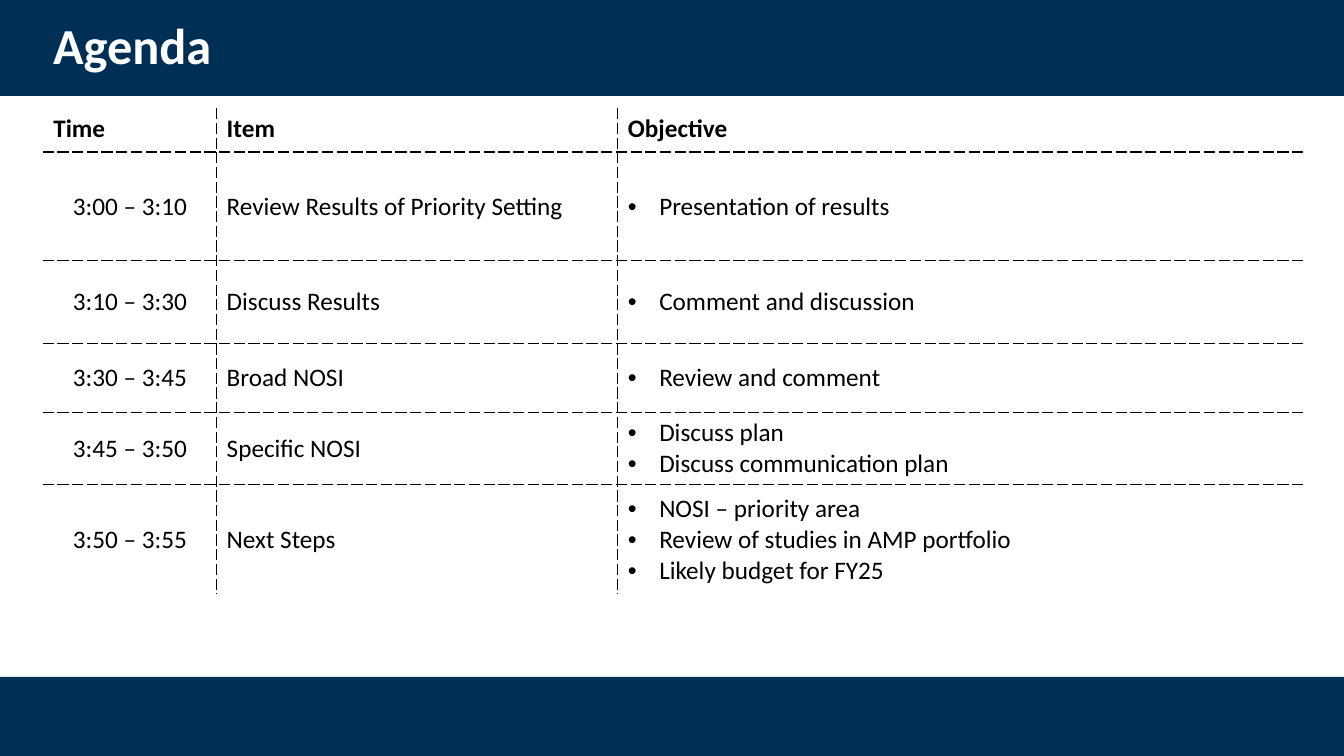
import pptx
import pptx.util
import pptx.dml.color
import pptx.enum.shapes
import pptx.enum.text
from lxml import etree

Cm, Pt = pptx.util.Cm, pptx.util.Pt
RGB = pptx.dml.color.RGBColor.from_string
MIDDLE = pptx.enum.text.MSO_ANCHOR.MIDDLE
NS = "http://schemas.openxmlformats.org/drawingml/2006/main"
COLORS = {"navy": "002F56", "white": "FFFFFF", "black": "000000"}
ROWS = [
    ("Time", "Item", ["Objective"]),
    ("3:00 – 3:10", "Review Results of Priority Setting", ["Presentation of results"]),
    ("3:10 – 3:30", "Discuss Results", ["Comment and discussion"]),
    ("3:30 – 3:45", "Broad NOSI", ["Review and comment"]),
    ("3:45 – 3:50", "Specific NOSI", ["Discuss plan", "Discuss communication plan"]),
    ("3:50 – 3:55", "Next Steps", [
        "NOSI – priority area",
        "Review of studies in AMP portfolio",
        "Likely budget for FY25",
    ]),
]
WIDTHS = [4.37, 10.11, 17.3]
HEIGHTS = [1.09, 2.74, 2.08, 1.75, 1.75, 2.79]


def style(para, size, color, bold):
    para.font.name = "Calibri"
    para.font.size = Pt(size)
    para.font.bold = bold
    para.font.color.rgb = RGB(COLORS[color])


def rule(cell, sides):
    """Draw dashed borders on the given sides, in the order L, R, T, B."""
    props = cell._tc.get_or_add_tcPr()
    for i, side in enumerate(sides):
        line = etree.fromstring(
            f'<a:ln{side} xmlns:a="{NS}" w="12700"><a:solidFill>'
            f'<a:srgbClr val="{COLORS["black"]}"/></a:solidFill>'
            f'<a:prstDash val="sysDash"/></a:ln{side}>')
        props.insert(i, line)


deck = pptx.Presentation()
deck.slide_width, deck.slide_height = Cm(33.87), Cm(19.05)
slide = deck.slides.add_slide(deck.slide_layouts[6])

# Bands at the top and bottom
for top, height in [(0, 2.42), (17.06, 2.03)]:
    band = slide.shapes.add_shape(pptx.enum.shapes.MSO_SHAPE.RECTANGLE,
                                  0, Cm(top), deck.slide_width, Cm(height))
    band.shadow.inherit = False
    band.fill.solid()
    band.fill.fore_color.rgb = RGB(COLORS["navy"])
    band.line.fill.background()

# Agenda table
frame = slide.shapes.add_table(len(ROWS), len(WIDTHS), Cm(1.09), Cm(2.74),
                               Cm(sum(WIDTHS)), Cm(sum(HEIGHTS)))
table = frame.table
table.first_row = table.horz_banding = False
for column, width in zip(table.columns, WIDTHS):
    column.width = Cm(width)
for row, height in zip(table.rows, HEIGHTS):
    row.height = Cm(height)

for r, (time, item, goals) in enumerate(ROWS):
    for c, lines in enumerate([[time], [item], goals]):
        cell = table.cell(r, c)
        cell.fill.solid()
        cell.fill.fore_color.rgb = RGB(COLORS["white"])
        inner = {"L": c > 0, "R": c < len(WIDTHS) - 1,
                 "T": r > 0, "B": r < len(ROWS) - 1}
        rule(cell, [side for side in inner if inner[side]])
        if r > 0:
            cell.vertical_anchor = MIDDLE
        cell.text_frame.text = "\n".join(lines)
        for para in cell.text_frame.paragraphs:
            if r > 0 and c == 0:
                para.alignment = pptx.enum.text.PP_ALIGN.CENTER
            if r > 0 and c == 2:
                props = para._p.get_or_add_pPr()
                props.set("marL", str(Cm(0.79)))
                props.set("indent", str(-Cm(0.79)))
                font = etree.SubElement(props, f"{{{NS}}}buFont")
                font.set("typeface", "Arial")
                etree.SubElement(props, f"{{{NS}}}buChar").set("char", "•")
            style(para, 18, "black", r == 0)

# Title
title = slide.shapes.add_textbox(Cm(1.09), Cm(0.28), Cm(29.21), Cm(1.88)).text_frame
title.word_wrap = True
title.vertical_anchor = MIDDLE
title.text = "Agenda"
title.paragraphs[0].line_spacing = 0.9
style(title.paragraphs[0], 36, "white", True)

deck.save("out.pptx")
